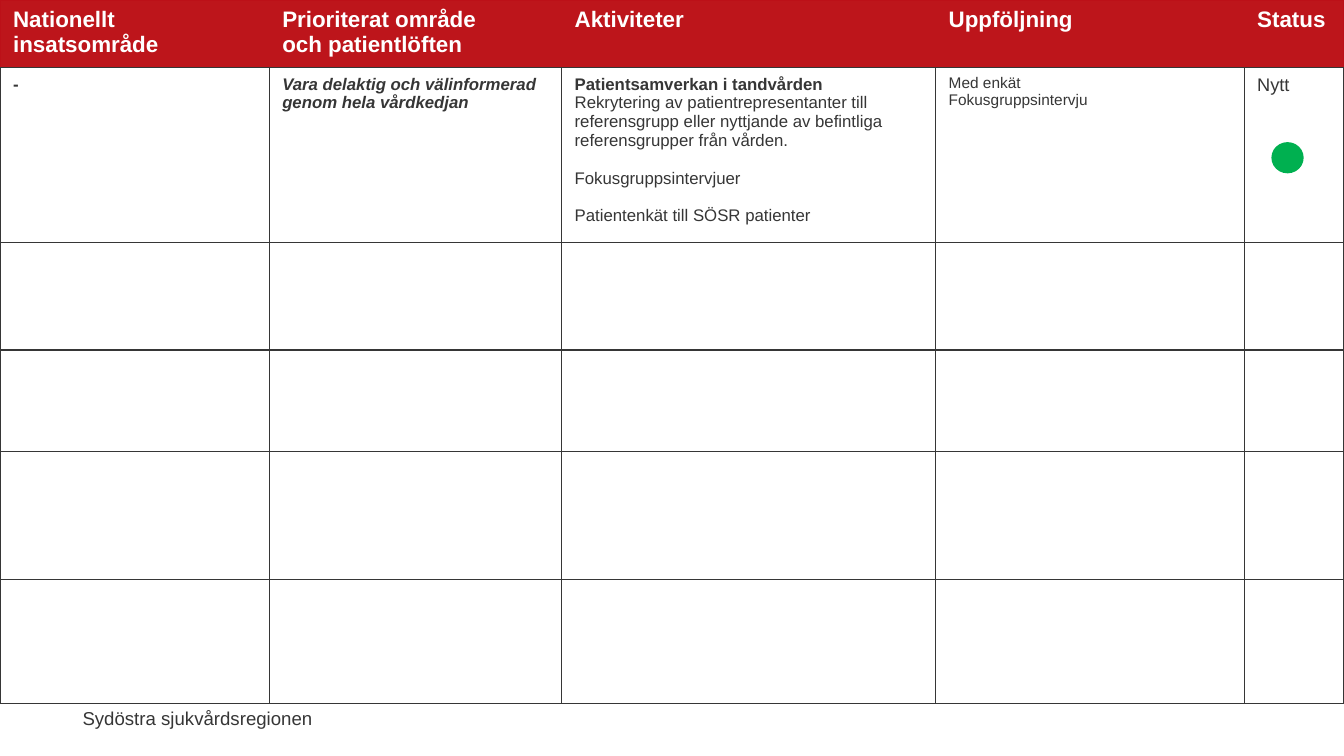
from dataclasses import dataclass, field
from itertools import accumulate

from lxml.etree import SubElement
from pptx import Presentation
from pptx.dml.color import RGBColor
from pptx.enum.shapes import MSO_SHAPE as Shape
from pptx.enum.text import MSO_ANCHOR as Anchor, MSO_AUTO_SIZE as AutoSize, PP_ALIGN as Align
from pptx.oxml.ns import qn
from pptx.util import Inches, Pt

COLUMNS = (2.67, 2.9, 3.71, 3.06, 0.99)
ROWS = (0.67, 1.73, 1.07, 1.01, 1.27, 1.23)
COLUMN_EDGES = (0, *accumulate(COLUMNS))
ROW_EDGES = (0, *accumulate(ROWS))
WIDTH, HEIGHT = COLUMN_EDGES[-1], 7.5

RED, HEADER_RED, INK, WHITE, GREEN = "BC1018", "BD151B", "363636", "FFFFFF", "00B050"
CELL_MARGINS = {
    "margin_left": Inches(0.13), "margin_right": Inches(0.13),
    "margin_top": Inches(0.07), "margin_bottom": Inches(0.07),
}


@dataclass
class Line:
    """One paragraph of text with its character format and the space above it."""
    text: str
    size: float = 12
    color: str = INK
    before: float = 0
    style: dict = field(default_factory=dict)


BOLD = {"bold": True}
HEADINGS = ("Nationellt insatsområde", "Prioriterat område\voch patientlöften",
            "Aktiviteter", "Uppföljning", "Status")
HEADER = [[Line(text, 16, WHITE, style=BOLD)] for text in HEADINGS]
ACTIVITY = [
    [Line("-", style=BOLD)],
    [Line("Vara delaktig och välinformerad genom hela vårdkedjan",
          style={"bold": True, "italic": True})],
    [
        Line("Patientsamverkan i tandvården", style=BOLD),
        Line("Rekrytering av patientrepresentanter till referensgrupp eller "
             "nyttjande av befintliga referensgrupper från vården."),
        Line("Fokusgruppsintervjuer", before=13.5),
        Line("Patientenkät till SÖSR patienter", before=13.5),
    ],
    [Line("Med enkät", 11), Line("Fokusgruppsintervju", 11)],
    [Line("Nytt", 13)],
]
CONTENT = [HEADER, ACTIVITY] + [[[] for _ in COLUMNS] for _ in ROWS[2:]]


def rgb(color: str) -> RGBColor:
    return RGBColor.from_string(color)


def apply_format(target, values: dict) -> None:
    for name, value in values.items():
        setattr(target, name, value)


def write_lines(frame, lines: list[Line], align=Align.LEFT) -> None:
    for index, line in enumerate(lines):
        para = frame.add_paragraph() if index else frame.paragraphs[0]
        para.text = line.text
        apply_format(para, {"alignment": align, "space_before": Pt(line.before)})
        for span in para.runs:
            apply_format(span.font, {"name": "Arial", "size": Pt(line.size),
                                     "bold": False, "italic": False, **line.style})
            span.font.color.rgb = rgb(line.color)


def set_borders(cell, sides: dict) -> None:
    """Take a (colour, points) pair, or None for no line, for each of L, R, T and B."""
    properties = cell._tc.get_or_add_tcPr()
    for index, side in enumerate("LRTB"):
        color, points = sides[side] or (None, 0)
        border = SubElement(properties, qn(f"a:ln{side}"), w=str(Pt(points)))
        if color:
            fill = SubElement(border, qn("a:solidFill"))
            SubElement(fill, qn("a:srgbClr"), val=color)
        else:
            SubElement(border, qn("a:noFill"))
        properties.insert(index, border)


def borders_for(row: int, column: int) -> dict:
    ink, red = (INK, 1), (RED, 0.75)
    if row:
        return dict.fromkeys("LRTB", ink)
    return {"L": red if column == 0 else None,
            "R": red if column == len(COLUMNS) - 1 else None,
            "T": red, "B": ink}


def add_plan_table(page) -> None:
    table = page.shapes.add_table(len(ROWS), len(COLUMNS), 0, 0,
                                  Inches(WIDTH), Inches(ROW_EDGES[-1])).table
    table.horz_banding = False
    for column, width in zip(table.columns, COLUMNS):
        column.width = Inches(width)
    for row, height in zip(table.rows, ROWS):
        row.height = Inches(height)
    for row, cells in enumerate(CONTENT):
        for column, lines in enumerate(cells):
            cell = table.cell(row, column)
            apply_format(cell, CELL_MARGINS)
            cell.fill.solid()
            cell.fill.fore_color.rgb = rgb(WHITE if row else HEADER_RED)
            set_borders(cell, borders_for(row, column))
            write_lines(cell.text_frame, lines)


def add_status_dot(page) -> None:
    dot = page.shapes.add_shape(Shape.OVAL, Inches(COLUMN_EDGES[4] + 0.27),
                                Inches(ROW_EDGES[1] + 0.74), Inches(0.32), Inches(0.31))
    dot.shadow.inherit = False
    dot.fill.solid()
    dot.fill.fore_color.rgb = rgb(GREEN)
    dot.line.fill.background()


def add_region_name(page) -> None:
    box = page.shapes.add_textbox(Inches(0.7), Inches(6.96), Inches(2.5), Inches(0.33))
    apply_format(box.text_frame, {"word_wrap": False, "vertical_anchor": Anchor.MIDDLE,
                                  "auto_size": AutoSize.SHAPE_TO_FIT_TEXT})
    write_lines(box.text_frame, [Line("Sydöstra sjukvårdsregionen", 13.3)], Align.RIGHT)


def main() -> None:
    deck = Presentation()
    apply_format(deck, {"slide_width": Inches(WIDTH), "slide_height": Inches(HEIGHT)})
    page = deck.slides.add_slide(deck.slide_layouts[6])
    add_region_name(page)
    add_plan_table(page)
    add_status_dot(page)
    deck.save("out.pptx")


if __name__ == "__main__":
    main()
